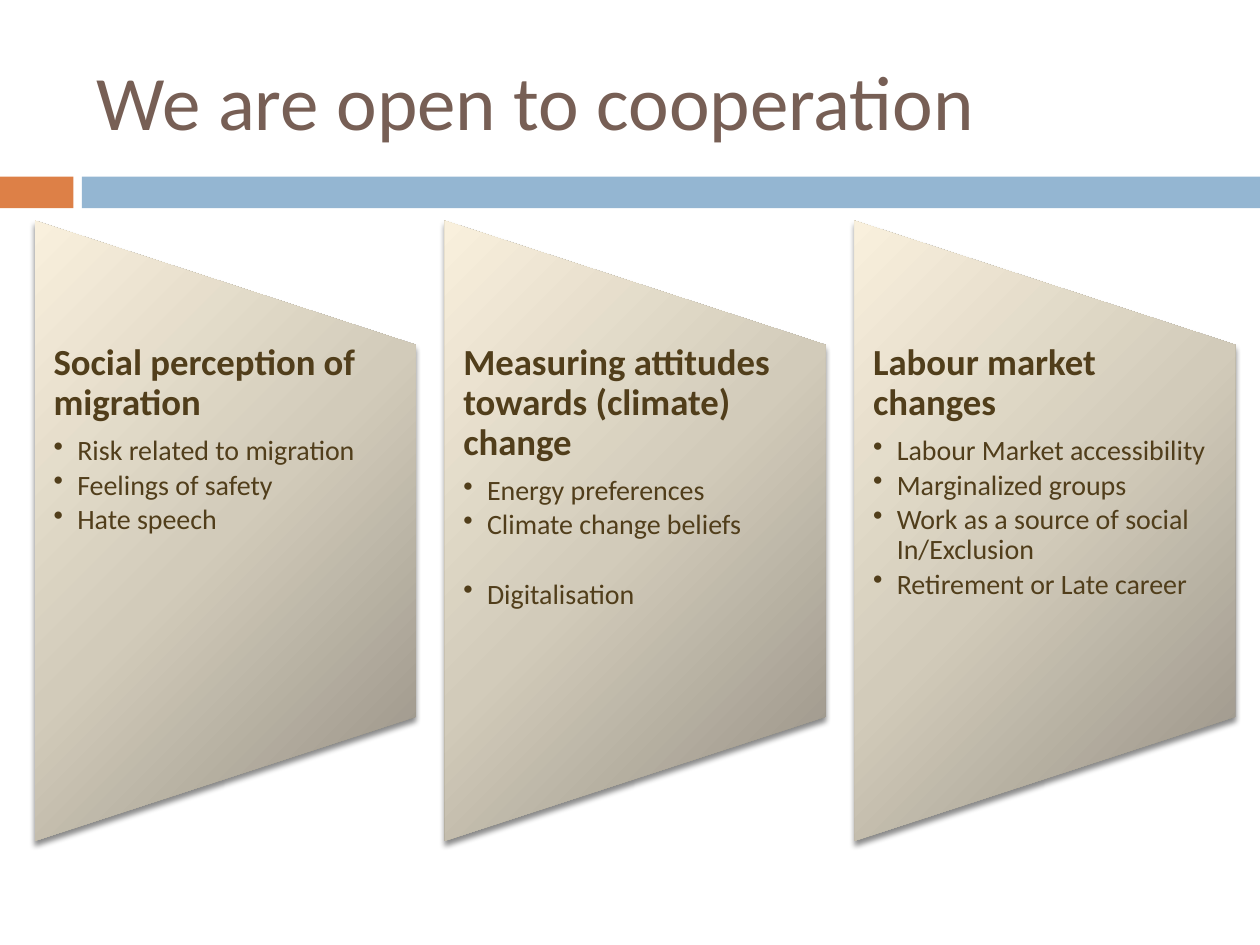
from dataclasses import dataclass

from lxml import etree
from pptx import Presentation
from pptx.dml.color import RGBColor
from pptx.enum.shapes import MSO_SHAPE
from pptx.enum.text import MSO_ANCHOR
from pptx.oxml import parse_xml
from pptx.util import Cm, Pt

RECTANGLE = MSO_SHAPE.RECTANGLE
TRAPEZOID = MSO_SHAPE.FLOWCHART_MANUAL_OPERATION
MIDDLE = MSO_ANCHOR.MIDDLE
NAMESPACE = "http://schemas.openxmlformats.org/drawingml/2006/main"


@dataclass(frozen=True)
class Theme:
    font: str = "Calibri"
    title: RGBColor = RGBColor(0x77, 0x5F, 0x55)
    text: RGBColor = RGBColor(0x51, 0x3E, 0x1B)
    orange: RGBColor = RGBColor(0xDD, 0x80, 0x47)
    blue: RGBColor = RGBColor(0x94, 0xB6, 0xD2)
    panel_stops: tuple = ((0, "948E83"), (50, "D2CBBA"), (100, "F9F0DD"))
    title_size: Pt = Pt(44)
    heading_size: Pt = Pt(21)
    bullet_size: Pt = Pt(16)


THEME = Theme()
BULLET_INDENT = Cm(0.48)
GROUP_GAP = Pt(20)

# Each panel: heading, then groups of bullets set apart by a gap
PANELS = [
    ("Social perception of migration",
     [["Risk related to migration", "Feelings of safety", "Hate speech"]]),
    ("Measuring attitudes towards (climate) change",
     [["Energy preferences", "Climate change beliefs"], ["Digitalisation"]]),
    ("Labour market changes",
     [["Labour Market accessibility", "Marginalized groups",
       "Work as a source of social In/Exclusion", "Retirement or Late career"]]),
]


def style_panel(shape):
    """Give the panel a diagonal gradient, no line and a soft shadow."""
    stops = "".join(
        f'<a:gs pos="{position * 1000}"><a:srgbClr val="{color}"/></a:gs>'
        for position, color in THEME.panel_stops)
    shape.line.fill.background()
    outline = shape.line._get_or_add_ln()
    outline.addprevious(parse_xml(
        f'<a:gradFill xmlns:a="{NAMESPACE}" rotWithShape="0"><a:gsLst>{stops}</a:gsLst>'
        '<a:lin ang="13500000" scaled="0"/></a:gradFill>'))
    outline.addnext(parse_xml(
        f'<a:effectLst xmlns:a="{NAMESPACE}">'
        f'<a:outerShdw blurRad="{Pt(3)}" dist="{Pt(2.4)}" dir="5400000" rotWithShape="0">'
        '<a:srgbClr val="000000"><a:alpha val="45000"/></a:srgbClr>'
        '</a:outerShdw></a:effectLst>'))


def style_paragraph(paragraph, text, size, color, bold=False):
    paragraph.text = text
    paragraph.font.name = THEME.font
    paragraph.font.size = size
    paragraph.font.color.rgb = color
    paragraph.font.bold = bold


presentation = Presentation()
presentation.slide_width = Cm(25.4)
presentation.slide_height = Cm(19.05)
slide = presentation.slides.add_slide(presentation.slide_layouts[6])

# Band under the title
for left, width, color in ((0, 1.48, THEME.orange), (1.65, 23.75, THEME.blue)):
    bar = slide.shapes.add_shape(RECTANGLE, Cm(left), Cm(3.56), Cm(width), Cm(0.64))
    bar.shadow.inherit = False
    bar.fill.solid()
    bar.fill.fore_color.rgb = color
    bar.line.fill.background()

title = slide.shapes.add_textbox(Cm(1.7), Cm(0.64), Cm(22.66), Cm(2.74))
title.text_frame.word_wrap = True
title.text_frame.vertical_anchor = MIDDLE
style_paragraph(title.text_frame.paragraphs[0], "We are open to cooperation",
                THEME.title_size, THEME.title)

# Three panels, each a trapezoid turned on its side with text on top
panel_width, panel_height = Cm(7.67), Cm(12.5)
panel_top, panel_pitch = Cm(4.45), Cm(8.26)
turn_offset = (panel_height - panel_width) // 2

for index, (heading, groups) in enumerate(PANELS):
    left = Cm(0.71) + index * panel_pitch
    panel = slide.shapes.add_shape(TRAPEZOID, left - turn_offset, panel_top + turn_offset,
                                   panel_height, panel_width)
    panel.rotation = 270
    style_panel(panel)

    box = slide.shapes.add_textbox(left, Cm(6.94), panel_width, Cm(7.5))
    frame = box.text_frame
    frame.word_wrap = True
    frame.margin_left = frame.margin_right = Cm(0.37)
    frame.margin_top = frame.margin_bottom = 0

    paragraph = frame.paragraphs[0]
    style_paragraph(paragraph, heading, THEME.heading_size, THEME.text, bold=True)
    paragraph.line_spacing = 0.9
    paragraph.space_after = Pt(7.35)

    for group_index, group in enumerate(groups):
        for bullet_index, bullet in enumerate(group):
            paragraph = frame.add_paragraph()
            style_paragraph(paragraph, bullet, THEME.bullet_size, THEME.text)
            paragraph.line_spacing = 0.9
            paragraph.space_after = Pt(2.4)
            if group_index and not bullet_index:
                paragraph.space_before = GROUP_GAP
            properties = paragraph._p.get_or_add_pPr()
            properties.set("marL", str(BULLET_INDENT))
            properties.set("indent", str(-BULLET_INDENT))
            bullet_mark = etree.Element(f"{{{NAMESPACE}}}buChar", char="•")
            properties.find(f"{{{NAMESPACE}}}defRPr").addprevious(bullet_mark)

presentation.save("out.pptx")
